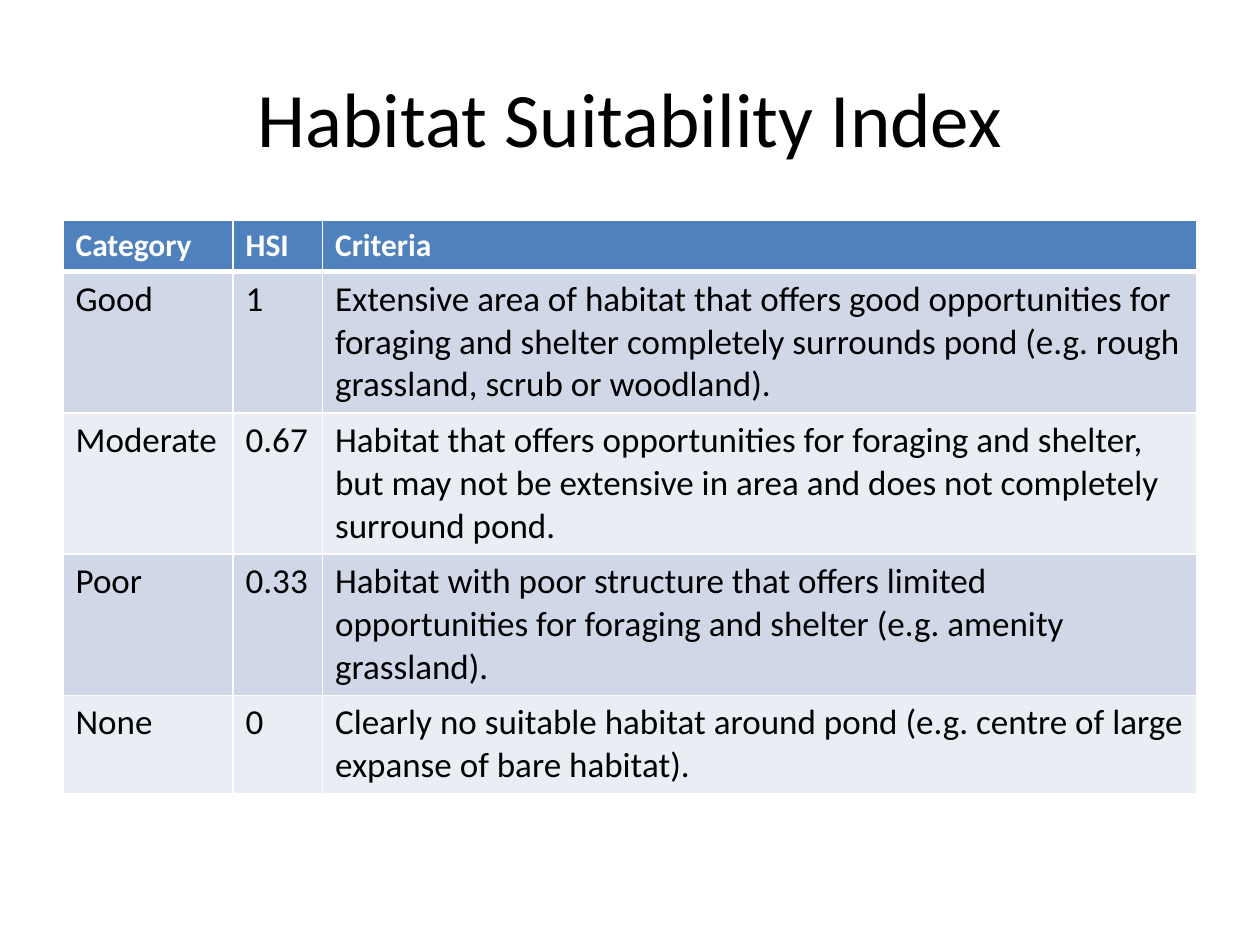
from dataclasses import dataclass
from lxml.etree import SubElement
from pptx import Presentation
from pptx.dml.color import RGBColor
from pptx.enum.text import MSO_ANCHOR, PP_ALIGN
from pptx.oxml.ns import qn
from pptx.util import Pt


@dataclass(frozen=True)
class Theme:
    font: str = "Calibri"
    title_size: int = 44
    header_size: int = 18
    body_size: int = 20
    black: str = "000000"
    white: str = "FFFFFF"
    header_fill: str = "4F81BD"
    bands: tuple = ("D0D8E8", "E9EDF4")


theme = Theme()


def style_run(r, size, color, bold=False):
    r.font.name = theme.font
    r.font.size = Pt(size)
    r.font.bold = bold
    r.font.color.rgb = RGBColor.from_string(color)


def add_border(cell, side, width):
    ln = SubElement(cell._tc.get_or_add_tcPr(), qn(f"a:ln{side}"), w=str(Pt(width)))
    fill = SubElement(ln, qn("a:solidFill"))
    SubElement(fill, qn("a:srgbClr"), val=theme.white)


prs = Presentation()
prs.slide_width, prs.slide_height = Pt(720), Pt(540)
s = prs.slides.add_slide(prs.slide_layouts[6])

# Criteria table
rows = [
    ("Category", "HSI", "Criteria"),
    ("Good", "1", "Extensive area of habitat that offers good opportunities for foraging "
     "and shelter completely surrounds pond (e.g. rough grassland, scrub or woodland)."),
    ("Moderate", "0.67", "Habitat that offers opportunities for foraging and shelter, but may "
     "not be extensive in area and does not completely surround pond."),
    ("Poor", "0.33", "Habitat with poor structure that offers limited opportunities for "
     "foraging and shelter (e.g. amenity grassland)."),
    ("None", "0", "Clearly no suitable habitat around pond (e.g. centre of large expanse of "
     "bare habitat)."),
]
col_widths = (97.2, 51.1, 499.7)
sp = s.shapes.add_table(len(rows), len(col_widths), Pt(36), Pt(126), Pt(648), Pt(322))
table = sp.table
for col, width in zip(table.columns, col_widths):
    col.width = Pt(width)

for i, texts in enumerate(rows):
    table.rows[i].height = Pt(29.2)  # rows grow to fit their text
    header = i == 0
    fill = theme.header_fill if header else theme.bands[(i - 1) % 2]
    size = theme.header_size if header else theme.body_size
    color = theme.white if header else theme.black
    # A thicker rule separates the header from the body
    borders = {"L": 1, "R": 1, "T": 3 if i == 1 else 1, "B": 3 if header else 1}
    for j, text in enumerate(texts):
        cell = table.cell(i, j)
        cell.text_frame.text = text
        style_run(cell.text_frame.paragraphs[0].runs[0], size, color, header)
        for side, width in borders.items():
            add_border(cell, side, width)
        cell.fill.solid()
        cell.fill.fore_color.rgb = RGBColor.from_string(fill)
sp.height = Pt(322)

# Title
tf = s.shapes.add_textbox(Pt(36), Pt(21.6), Pt(648), Pt(90)).text_frame
tf.word_wrap = True
tf.vertical_anchor = MSO_ANCHOR.MIDDLE
tf.text = "Habitat Suitability Index"
p = tf.paragraphs[0]
p.alignment = PP_ALIGN.CENTER
style_run(p.runs[0], theme.title_size, theme.black)

prs.save("out.pptx")
